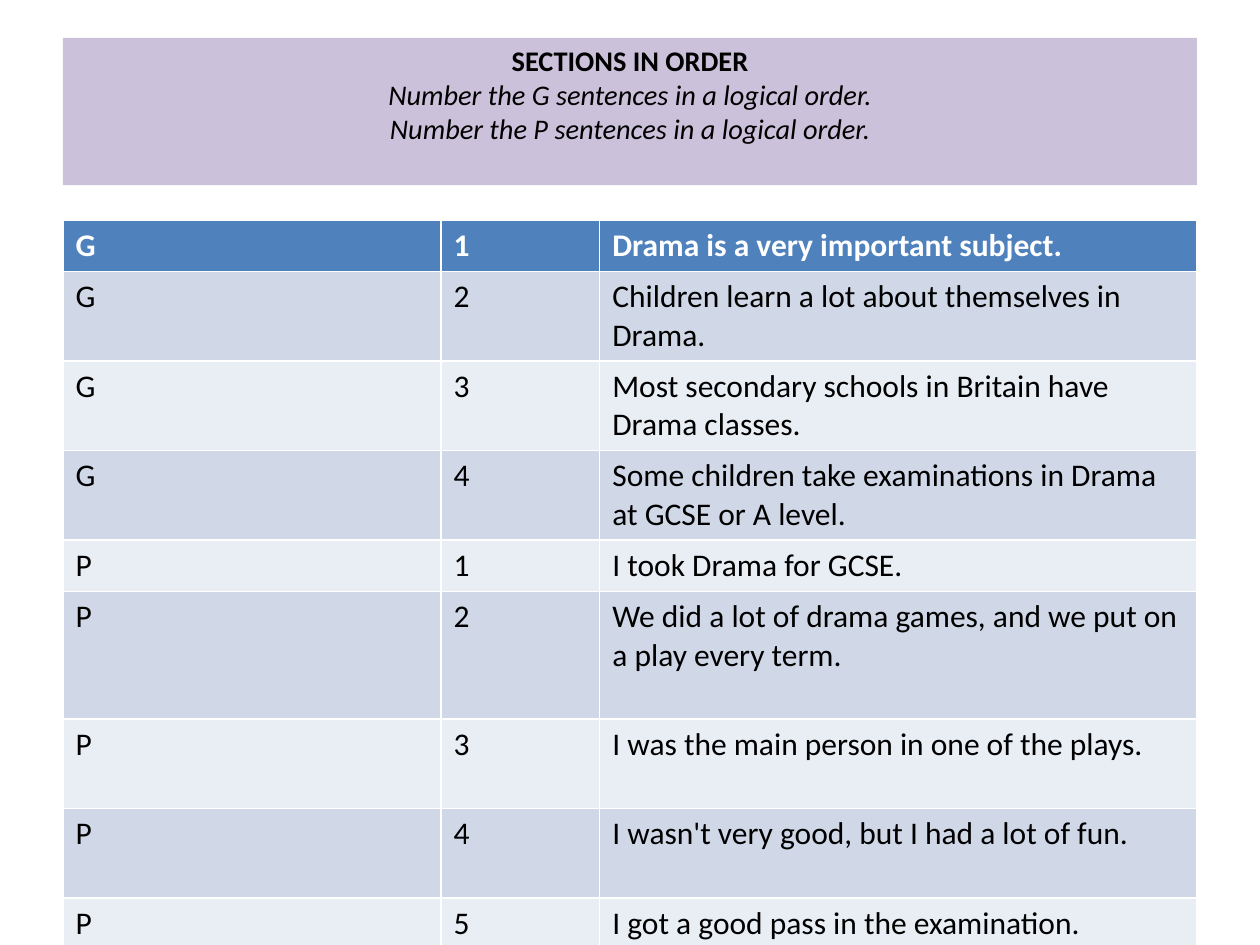
from pptx import Presentation
from pptx.dml.color import RGBColor
from pptx.enum.shapes import MSO_SHAPE
from pptx.enum.text import MSO_ANCHOR, PP_ALIGN
from pptx.util import Inches, Pt

RECT = MSO_SHAPE.RECTANGLE
TOP = MSO_ANCHOR.TOP
CENTER, LEFT = PP_ALIGN.CENTER, PP_ALIGN.LEFT

TITLE = "SECTIONS IN ORDER"
TASKS = [
    "Number the G sentences in a logical order.",
    "Number the Ρ sentences in a logical order.",
]
# Section, number, sentence, height in text lines
ROWS = [
    ("G", "1", "Drama is a very important subject.", 1),
    ("G", "2", "Children learn a lot about themselves in Drama.", 2),
    ("G", "3", "Most secondary schools in Britain have Drama classes.", 2),
    ("G", "4", "Some children take examinations in Drama at GCSE or A level.", 2),
    ("P", "1", "I took Drama for GCSE.", 1),
    ("P", "2", "We did a lot of drama games, and we put on a play every term.", 3),
    ("P", "3", "I was the main person in one of the plays.", 2),
    ("P", "4", "I wasn't very good, but I had a lot of fun.", 2),
    ("P", "5", "I got a good pass in the examination.", 2),
]
COLS = [3, 1.26, 4.74]
EDGE, WIDTH = 0.5, 9
LINE, PAD = 0.305, 0.1
HEAD, BANDS = "4F81BD", ["E9EDF4", "D0D8E8"]


def color(code):
    return RGBColor.from_string(code)


def paint(thing, code):
    thing.fill.solid()
    thing.fill.fore_color.rgb = color(code)


def write(para, text, size=18, ink="000000", bold=False, italic=False, align=LEFT):
    para.alignment = align
    run = para.add_run()
    run.text = text
    font = run.font
    font.name, font.size = "Calibri", Pt(size)
    font.bold, font.italic = bold, italic
    font.color.rgb = color(ink)


def add_title(slide):
    box = slide.shapes.add_shape(
        RECT, Inches(EDGE), Inches(0.3), Inches(WIDTH), Inches(1.17))
    box.shadow.inherit = False
    paint(box, "CCC1DA")
    box.line.fill.background()
    frame = box.text_frame
    frame.word_wrap = True
    frame.vertical_anchor = TOP
    frame.margin_top = Inches(0.04)
    write(frame.paragraphs[0], TITLE, size=16.2, bold=True, align=CENTER)
    for task in TASKS:
        write(frame.add_paragraph(), task, size=16.2, italic=True, align=CENTER)


def add_rows(slide):
    heights = [Inches(PAD + LINE * row[-1]) for row in ROWS]
    table = slide.shapes.add_table(
        len(ROWS), len(COLS), Inches(EDGE), Inches(1.75),
        Inches(WIDTH), sum(heights)).table
    for col, width in zip(table.columns, COLS):
        col.width = Inches(width)
    for r, (*texts, _) in enumerate(ROWS):
        table.rows[r].height = heights[r]
        first = r == 0
        for c, text in enumerate(texts):
            cell = table.cell(r, c)
            paint(cell, HEAD if first else BANDS[r % 2])
            write(cell.text_frame.paragraphs[0], text, bold=first,
                  ink="FFFFFF" if first else "000000")


def main():
    deck = Presentation()
    deck.slide_width, deck.slide_height = Inches(10), Inches(7.5)
    slide = deck.slides.add_slide(deck.slide_layouts[6])
    add_title(slide)
    add_rows(slide)
    deck.save("out.pptx")


if __name__ == "__main__":
    main()
